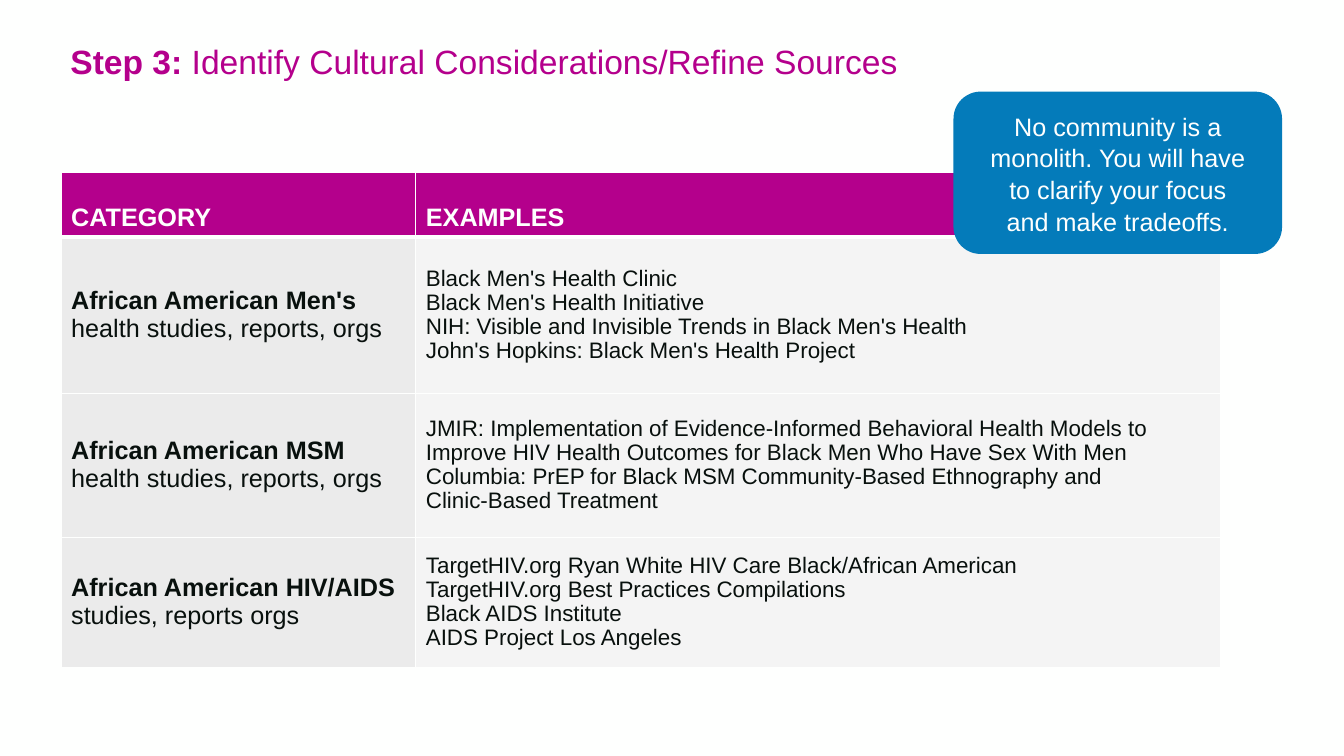
"""Build the slide on cultural considerations and refined sources."""
from dataclasses import dataclass

from lxml import etree
from pptx import Presentation
from pptx.dml.color import RGBColor
from pptx.enum.shapes import MSO_SHAPE
from pptx.enum.text import MSO_ANCHOR, PP_ALIGN
from pptx.oxml.ns import qn
from pptx.util import Cm, Pt

ROUNDED = MSO_SHAPE.ROUNDED_RECTANGLE
MIDDLE, BOTTOM = MSO_ANCHOR.MIDDLE, MSO_ANCHOR.BOTTOM
LEFT, CENTER = PP_ALIGN.LEFT, PP_ALIGN.CENTER
COLORS = {
    "paper": "FEFFFE",
    "magenta": "B4008C",
    "ink": "08100D",
    "gray": "EBEBEB",
    "blue": "047BBA",
}
FONT = "Arial"
COLUMN_WIDTHS = (8.94, 20.27)
HEADER_HEIGHT = 1.63


@dataclass(frozen=True)
class Category:
    """One table row: a group, what to look for, and examples."""
    group: str
    kinds: str
    examples: tuple[str, ...]
    height: float


CATEGORIES = (
    Category("African American Men's", "health studies, reports, orgs", (
        "Black Men's Health Clinic",
        "Black Men's Health Initiative",
        "NIH: Visible and Invisible Trends in Black Men's Health",
        "John's Hopkins: Black Men's Health Project",
    ), 3.93),
    Category("African American MSM", "health studies, reports, orgs", (
        "JMIR: Implementation of Evidence-Informed Behavioral Health Models to "
        "Improve HIV Health Outcomes for Black Men Who Have Sex With Men",
        "Columbia: PrEP for Black MSM Community-Based Ethnography and",
        "Clinic-Based Treatment",
    ), 3.63),
    Category("African American HIV/AIDS", "studies, reports orgs", (
        "TargetHIV.org Ryan White HIV Care Black/African American",
        "TargetHIV.org Best Practices Compilations",
        "Black AIDS Institute",
        "AIDS Project Los Angeles",
    ), 3.27),
)


def color(name: str) -> RGBColor:
    """Look up a named colour."""
    return RGBColor.from_string(COLORS[name])


def add_text(para, text: str, *, size: float = 18, ink: str = "ink",
             bold: bool = False, align=LEFT, spacing: float = 0.97) -> None:
    """Append a formatted span to a paragraph."""
    para.alignment = align
    para.line_spacing = spacing
    para.space_before = Pt(0)
    span = para.add_run()
    span.text = text
    span.font.name = FONT
    span.font.size = Pt(size)
    span.font.bold = bold
    span.font.color.rgb = color(ink)


def style_cell(cell, fill: str, anchor, *, alpha: int = 100,
               top: float = 1, bottom: float = 1) -> None:
    """Set the fill, anchor and borders of a table cell."""
    cell.vertical_anchor = anchor
    cell.fill.solid()
    cell.fill.fore_color.rgb = color(fill)
    properties = cell._tc.get_or_add_tcPr()
    if alpha < 100:
        tint = properties.find(".//" + qn("a:srgbClr"))
        etree.SubElement(tint, qn("a:alpha"), val=str(alpha * 1000))
    sides = {"L": 1, "R": 1, "T": top, "B": bottom}
    for position, (side, width) in enumerate(sides.items()):
        border = etree.Element(qn(f"a:ln{side}"), w=str(Pt(width)))
        solid = etree.SubElement(border, qn("a:solidFill"))
        etree.SubElement(solid, qn("a:srgbClr"), val=COLORS["paper"])
        properties.insert(position, border)


def add_title(page) -> None:
    """Fill and place the title."""
    box = page.shapes.title
    box.left, box.top, box.width, box.height = Cm(1.52), Cm(-0.25), Cm(29.21), Cm(3.68)
    box.text_frame.vertical_anchor = MIDDLE
    box.text_frame.word_wrap = True
    para = box.text_frame.paragraphs[0]
    add_text(para, "Step 3: ", size=24, ink="magenta", bold=True, spacing=0.9)
    add_text(para, "Identify Cultural Considerations/Refine Sources",
             size=24, ink="magenta", spacing=0.9)


def add_category_table(page) -> None:
    """Draw the table of categories and examples."""
    heights = (HEADER_HEIGHT, *(category.height for category in CATEGORIES))
    table = page.shapes.add_table(
        len(heights), len(COLUMN_WIDTHS), Cm(1.54), Cm(4.35),
        Cm(sum(COLUMN_WIDTHS)), Cm(sum(heights))).table
    for column, width in zip(table.columns, COLUMN_WIDTHS):
        column.width = Cm(width)
    for row, height in zip(table.rows, heights):
        row.height = Cm(height)
    for cell, heading in zip(table.rows[0].cells, ("CATEGORY", "EXAMPLES")):
        style_cell(cell, "magenta", BOTTOM, bottom=3)
        add_text(cell.text_frame.paragraphs[0], heading, ink="paper", bold=True)
    for index, category in enumerate(CATEGORIES, start=1):
        name_cell, example_cell = table.rows[index].cells
        top = 3 if index == 1 else 1
        style_cell(name_cell, "gray", MIDDLE, top=top)
        style_cell(example_cell, "gray", MIDDLE, alpha=50, top=top)
        para = name_cell.text_frame.paragraphs[0]
        add_text(para, category.group, bold=True)
        para.add_line_break()
        add_text(para, category.kinds)
        frame = example_cell.text_frame
        for number, example in enumerate(category.examples):
            para = frame.add_paragraph() if number else frame.paragraphs[0]
            add_text(para, example, size=16)


def add_callout(page) -> None:
    """Draw the rounded callout over the table's corner."""
    box = page.shapes.add_shape(ROUNDED, Cm(24.03), Cm(2.31), Cm(8.28), Cm(4.09))
    box.shadow.inherit = False
    box.fill.solid()
    box.fill.fore_color.rgb = color("blue")
    box.line.fill.background()
    frame = box.text_frame
    frame.word_wrap = True
    frame.vertical_anchor = MIDDLE
    frame.margin_left = frame.margin_right = Cm(0.62)
    add_text(frame.paragraphs[0],
             "No community is a monolith. You will have to clarify your focus "
             "and make tradeoffs.", ink="paper", align=CENTER, spacing=1.05)


def main() -> None:
    """Build and save the deck."""
    deck = Presentation()
    deck.slide_width, deck.slide_height = Cm(33.87), Cm(19.05)
    page = deck.slides.add_slide(deck.slide_layouts[5])
    page.background.fill.solid()
    page.background.fill.fore_color.rgb = color("paper")
    add_title(page)
    add_category_table(page)
    add_callout(page)
    deck.save("out.pptx")


if __name__ == "__main__":
    main()
